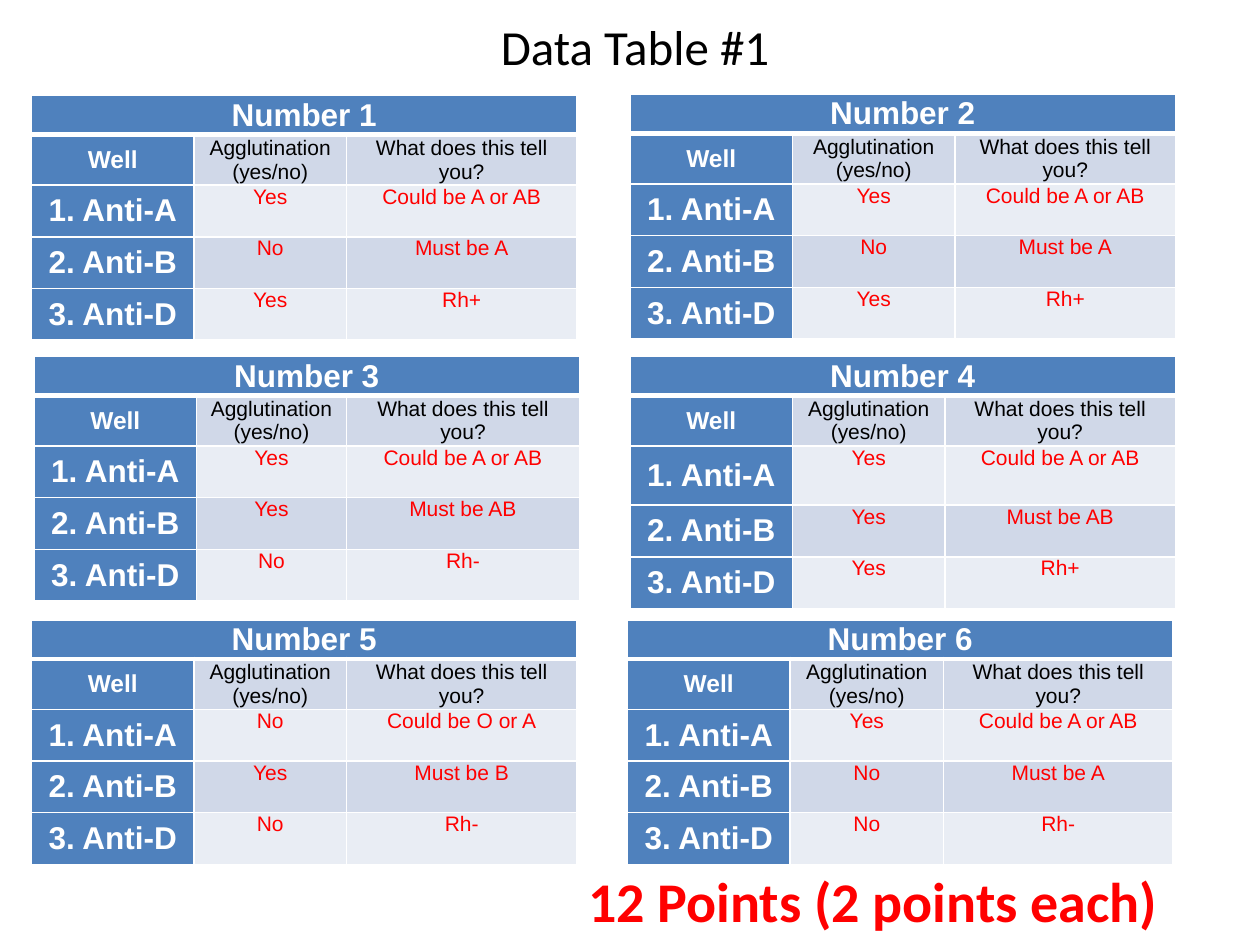
from dataclasses import dataclass

from lxml.etree import SubElement
from pptx import Presentation
from pptx.dml.color import RGBColor as Rgb
from pptx.enum.text import MSO_ANCHOR as Anchor, PP_ALIGN as Align
from pptx.oxml.ns import qn
from pptx.util import Inches, Pt


@dataclass(frozen=True)
class Theme:
    table_font: str = "Arial"
    text_font: str = "Calibri"
    blue: str = "4F81BD"
    bands: tuple = ("D0D8E8", "E9EDF4")
    white: str = "FFFFFF"
    black: str = "000000"
    red: str = "FF0000"
    title: int = 28
    points: int = 32
    heading: int = 18
    well: int = 14
    body: int = 12
    rule: int = 1
    thick_rule: int = 3


@dataclass(frozen=True)
class Sample:
    answers: tuple          # (agglutination, meaning) for each well
    yes_no_width: float
    nudge: tuple = (0, 0)   # shift from the grid position
    first_height: float = 0.41


THEME = Theme()

# Grid of tables, in inches
LEFTS = (0.25, 5)
TOP, ROW_PITCH = 0.75, 2.08
TABLE_WIDTH, WELL_WIDTH = 4.33, 1.29
HEADING_HEIGHT, LABEL_HEIGHT, WELL_HEIGHT = 0.31, 0.38, 0.41

LABELS = ("Well", "Agglutination (yes/no)", "What does this tell you?")
WELLS = ("1. Anti-A", "2. Anti-B", "3. Anti-D")
A_OR_AB = ("Yes", "Could be A or AB")
MUST_A, MUST_AB = ("No", "Must be A"), ("Yes", "Must be AB")
RH_PLUS, RH_MINUS = ("Yes", "Rh+"), ("No", "Rh-")

SAMPLES = (
    Sample((A_OR_AB, MUST_A, RH_PLUS), 1.21, (0, 0.01)),
    Sample((A_OR_AB, MUST_A, RH_PLUS), 1.29),
    Sample((A_OR_AB, MUST_AB, RH_MINUS), 1.19, (0.02, 0)),
    Sample((A_OR_AB, MUST_AB, RH_PLUS), 1.21, first_height=0.47),
    Sample((("No", "Could be O or A"), ("Yes", "Must be B"), RH_MINUS),
           1.21, (0, 0.01)),
    Sample((A_OR_AB, MUST_A, RH_MINUS), 1.22, (-0.02, 0.01)),
)


def write(frame, text, size, color, font, bold=False, align=Align.CENTER):
    para = frame.paragraphs[0]
    para.alignment = align
    span = para.add_run()
    span.text = text
    span.font.name, span.font.size, span.font.bold = font, Pt(size), bold
    span.font.color.rgb = Rgb.from_string(color)


def add_text(page, area, text, size, color, **style):
    box = page.shapes.add_textbox(*map(Inches, area))
    box.text_frame.word_wrap = True
    write(box.text_frame, text, size, color, THEME.text_font, **style)


def add_borders(cell, top, bottom):
    properties = cell._tc.get_or_add_tcPr()
    widths = {"L": THEME.rule, "R": THEME.rule, "T": top, "B": bottom}
    for side, width in widths.items():
        line = SubElement(properties, qn(f"a:ln{side}"), w=str(Pt(width)))
        fill = SubElement(line, qn("a:solidFill"))
        SubElement(fill, qn("a:srgbClr"), val=THEME.white)


def fill_cell(cell, row, text, size, color, fill, bold=False,
              anchor=Anchor.MIDDLE):
    # The heading is set off from the rows below by a thick rule
    add_borders(cell,
                THEME.thick_rule if row == 1 else THEME.rule,
                THEME.thick_rule if row == 0 else THEME.rule)
    cell.fill.solid()
    cell.fill.fore_color.rgb = Rgb.from_string(fill)
    cell.margin_left = cell.margin_right = Inches(0.07)
    cell.margin_top = cell.margin_bottom = 0
    cell.vertical_anchor = anchor
    if text:
        write(cell.text_frame, text, size, color, THEME.table_font, bold)


def add_sample_table(page, index, sample):
    grid_row, grid_column = divmod(index, len(LEFTS))
    left = LEFTS[grid_column] + sample.nudge[0]
    top = TOP + grid_row * ROW_PITCH + sample.nudge[1]
    widths = (WELL_WIDTH, sample.yes_no_width,
              TABLE_WIDTH - WELL_WIDTH - sample.yes_no_width)
    heights = (HEADING_HEIGHT, LABEL_HEIGHT, sample.first_height,
               WELL_HEIGHT, WELL_HEIGHT)
    area = map(Inches, (left, top, TABLE_WIDTH, sum(heights)))
    table = page.shapes.add_table(len(heights), len(widths), *area).table
    table.first_row = table.horz_banding = False
    for column, width in zip(table.columns, widths):
        column.width = Inches(width)
    for row, height in zip(table.rows, heights):
        row.height = Inches(height)

    # Heading across all columns
    table.cell(0, 0).merge(table.cell(0, 2))
    for column in range(3):
        text = "" if column else f"Number {index + 1}"
        fill_cell(table.cell(0, column), 0, text, THEME.heading,
                  THEME.white, THEME.blue, bold=True)

    # Column labels, then one row for each well
    rows = [LABELS] + [(well, *answer)
                       for well, answer in zip(WELLS, sample.answers)]
    for number, (name, *details) in enumerate(rows, start=1):
        is_label = number == 1
        fill_cell(table.cell(number, 0), number, name,
                  THEME.well if is_label else THEME.heading,
                  THEME.white, THEME.blue, bold=True)
        for column, text in enumerate(details, start=1):
            fill_cell(table.cell(number, column), number, text, THEME.body,
                      THEME.black if is_label else THEME.red,
                      THEME.bands[(number - 1) % 2],
                      anchor=Anchor.MIDDLE if is_label else Anchor.TOP)


def main():
    deck = Presentation()
    deck.slide_width, deck.slide_height = Inches(10), Inches(7.5)
    page = deck.slides.add_slide(deck.slide_layouts[6])

    # Title
    add_text(page, (0.29, 0.08, 9.5, 1.51), "Data Table #1",
             THEME.title, THEME.black)

    # Blood samples
    for index, sample in enumerate(SAMPLES):
        add_sample_table(page, index, sample)

    # Score
    add_text(page, (2.92, 6.83, 6.37, 0.64), "12 Points (2 points each)",
             THEME.points, THEME.red, bold=True, align=Align.RIGHT)

    deck.save("out.pptx")


if __name__ == "__main__":
    main()
